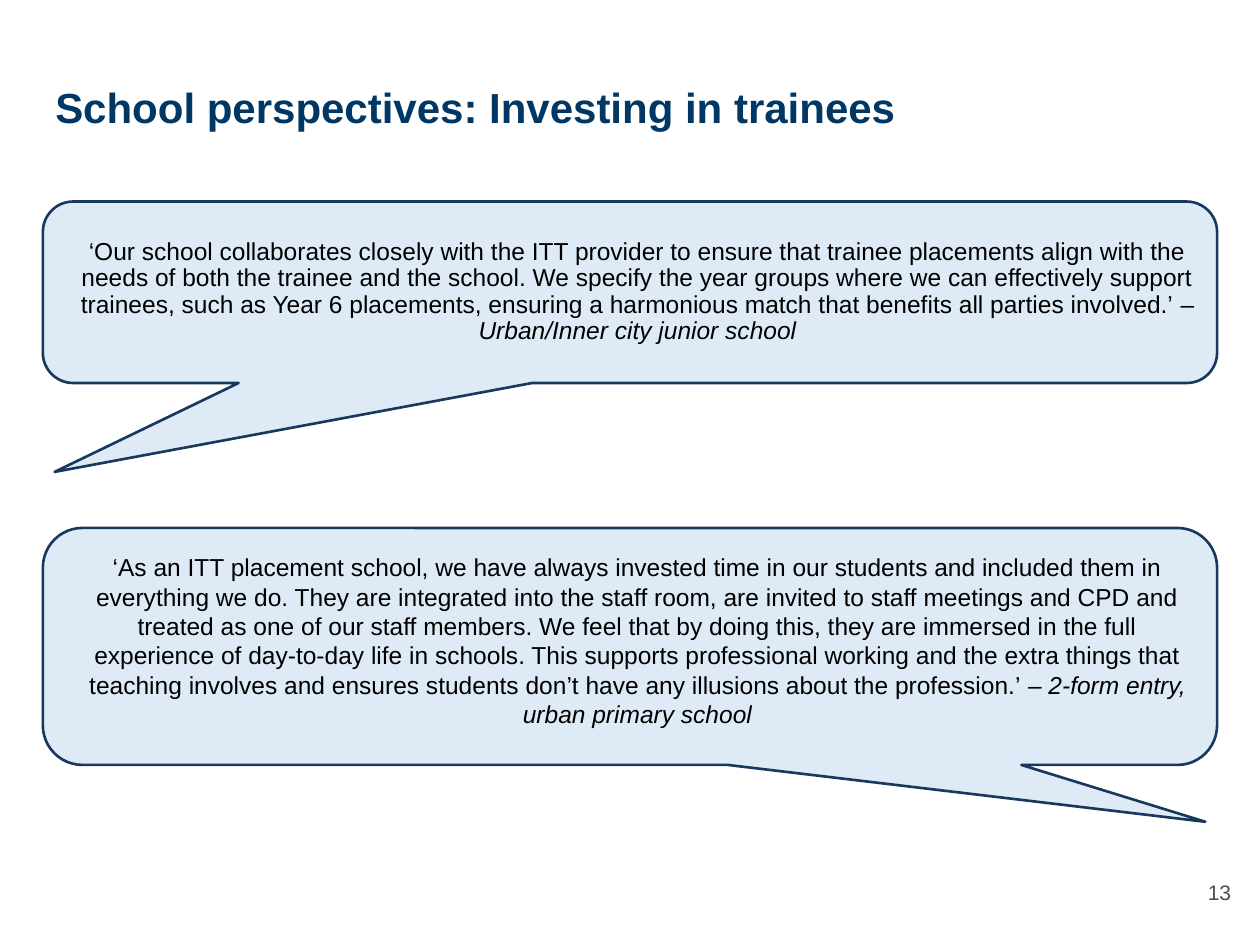
from pptx import Presentation
from pptx.dml.color import RGBColor
from pptx.enum import shapes, text
from pptx.util import Pt

TITLE = "School perspectives: Investing in trainees"
PAGE_NUMBER = "13"
QUOTES = [
    dict(
        quote="‘Our school collaborates closely with the ITT provider to ensure that "
              "trainee placements align with the needs of both the trainee and the school. "
              "We specify the year groups where we can effectively support trainees, such "
              "as Year 6 placements, ensuring a harmonious match that benefits all parties "
              "involved.’ ",
        source="– Urban/Inner city junior school",
        top=115.2, height=103.7, tail=(-0.49, 0.99),
        anchor=text.MSO_ANCHOR.MIDDLE, spacing=0.9,
    ),
    dict(
        quote="‘As an ITT placement school, we have always invested time in our students "
              "and included them in everything we do. They are integrated into the staff "
              "room, are invited to staff meetings and CPD and treated as one of our staff "
              "members. We feel that by doing this, they are immersed in the full "
              "experience of day-to-day life in schools. This supports professional working "
              "and the extra things that teaching involves and ensures students don’t have "
              "any illusions about the profession.’ ",
        source="– 2-form entry, urban primary school",
        top=301.7, height=135.4, tail=(0.49, 0.74),
        anchor=text.MSO_ANCHOR.TOP, spacing=1.0,
    ),
]
THEME = dict(
    font="Arial", title="003764", body="000000", number="4D4D4D",
    bubble="DEEBF7", outline="183860",
    title_size=24, body_size=14, number_size=12,
)
LEFT, WIDTH = 24.5, 671
INSET, INDENT = 7.2, 8.6
CORNER = 0.167


def color(name):
    return RGBColor.from_string(THEME[name])


def set_up_frame(sp, anchor, indent=0):
    tf = sp.text_frame
    tf.word_wrap = True
    tf.vertical_anchor = anchor
    tf.margin_top = tf.margin_right = tf.margin_bottom = Pt(INSET)
    tf.margin_left = Pt(INSET + indent)
    return tf.paragraphs[0]


def style(p, role, align, spacing=1.0, bold=False):
    p.alignment = align
    p.line_spacing = spacing
    p.font.name = THEME["font"]
    p.font.size = Pt(THEME[role + "_size"])
    p.font.color.rgb = color(role)
    p.font.bold = bold


def add_label(s, box, words, role, anchor, align, **look):
    sp = s.shapes.add_textbox(*map(Pt, box))
    p = set_up_frame(sp, anchor)
    p.add_run().text = words
    style(p, role, align, **look)


def add_bubble(s, item):
    sp = s.shapes.add_shape(
        shapes.MSO_SHAPE.ROUNDED_RECTANGULAR_CALLOUT,
        Pt(LEFT), Pt(item["top"]), Pt(WIDTH), Pt(item["height"]))
    for i, value in enumerate((*item["tail"], CORNER)):
        sp.adjustments[i] = value
    sp.shadow.inherit = False
    sp.fill.solid()
    sp.fill.fore_color.rgb = color("bubble")
    sp.line.color.rgb = color("outline")
    sp.line.width = Pt(1.5)

    p = set_up_frame(sp, item["anchor"], INDENT)
    style(p, "body", text.PP_ALIGN.CENTER, item["spacing"])
    p.add_run().text = item["quote"]
    r = p.add_run()
    r.text = item["source"]
    r.font.italic = True


def main():
    prs = Presentation()
    prs.slide_width, prs.slide_height = Pt(720), Pt(540)
    s = prs.slides.add_slide(prs.slide_layouts[6])
    add_label(s, (LEFT, 42.5, WIDTH, 60.5), TITLE, "title",
              text.MSO_ANCHOR.TOP, text.PP_ALIGN.LEFT, spacing=0.9, bold=True)
    for item in QUOTES:
        add_bubble(s, item)
    add_label(s, (667.4, 489.6, 43.2, 41), PAGE_NUMBER, "number",
              text.MSO_ANCHOR.MIDDLE, text.PP_ALIGN.RIGHT)
    prs.save("out.pptx")


if __name__ == "__main__":
    main()
